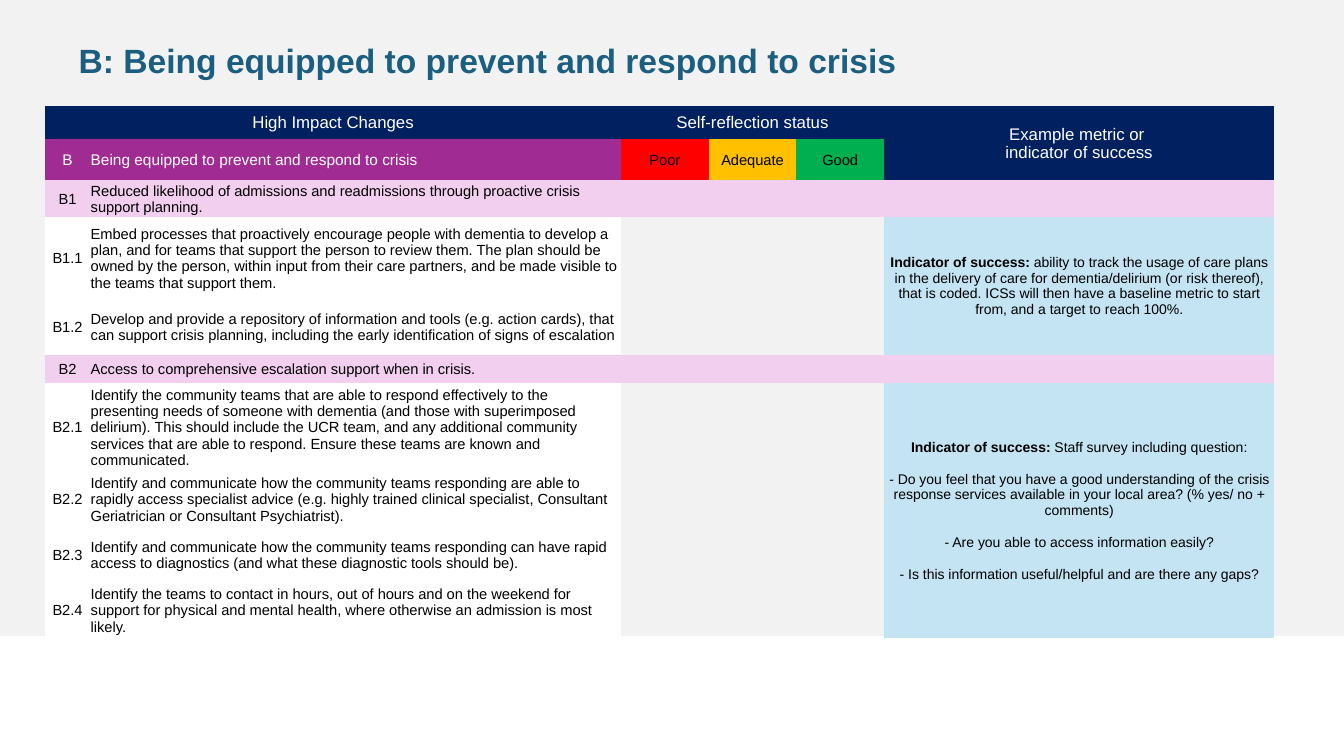
import lxml.etree
import pptx
import pptx.dml.color
import pptx.enum.shapes
import pptx.enum.text
import pptx.oxml.ns
import pptx.util

Inches = pptx.util.Inches
RGBColor = pptx.dml.color.RGBColor
ALIGN = pptx.enum.text.PP_ALIGN
ANCHOR = pptx.enum.text.MSO_ANCHOR

BLACK = RGBColor(0, 0, 0)
WHITE = RGBColor(0xFF, 0xFF, 0xFF)
BAND_GREY = RGBColor(0xF2, 0xF2, 0xF2)
TITLE_BLUE = RGBColor(0x1B, 0x5E, 0x7F)
NAVY = RGBColor(0x00, 0x20, 0x60)
PURPLE = RGBColor(0xA0, 0x2B, 0x93)
PINK = RGBColor(0xF2, 0xCE, 0xEF)
PALE_BLUE = RGBColor(0xC4, 0xE3, 0xF3)
RED = RGBColor(0xFF, 0x00, 0x00)
AMBER = RGBColor(0xFF, 0xC0, 0x00)
GREEN = RGBColor(0x00, 0xB0, 0x50)

NO_GRID_STYLE = "{2D5ABB26-0587-4C30-8999-92F81FD0307C}"
COLUMN_WIDTHS = [0.44, 5.27, 0.87, 0.87, 0.87, 3.87]
ROW_HEIGHTS = [0.33, 0.41, 0.36, 0.82, 0.55, 0.28, 0.88, 0.55, 0.55, 0.55]
METRIC_COLUMN = 5

STATUSES = [("Poor", RED), ("Adequate", AMBER), ("Good", GREEN)]

CHANGES = [
    ("B1", "Reduced likelihood of admissions and readmissions through proactive crisis support planning."),
    ("B1.1", "Embed processes that proactively encourage people with dementia to develop a plan, and for "
             "teams that support the person to review them. The plan should be owned by the person, within "
             "input from their care partners, and be made visible to the teams that support them."),
    ("B1.2", "Develop and provide a repository of information and tools (e.g. action cards), that can support "
             "crisis planning, including the early identification of signs of escalation"),
    ("B2", "Access to comprehensive escalation support when in crisis."),
    ("B2.1", "Identify the community teams that are able to respond effectively to the presenting needs of "
             "someone with dementia (and those with superimposed delirium). This should include the UCR team, "
             "and any additional community services that are able to respond. Ensure these teams are known "
             "and communicated."),
    ("B2.2", "Identify and communicate how the community teams responding are able to rapidly access "
             "specialist advice (e.g. highly trained clinical specialist, Consultant Geriatrician or "
             "Consultant Psychiatrist)."),
    ("B2.3", "Identify and communicate how the community teams responding can have rapid access to "
             "diagnostics (and what these diagnostic tools should be)."),
    ("B2.4", "Identify the teams to contact in hours, out of hours and on the weekend for support for physical "
             "and mental health, where otherwise an admission is most likely."),
]

INDICATORS = [
    (3, 4, "ability to track the usage of care plans in the delivery of care for dementia/delirium (or risk "
           "thereof), that is coded. ICSs will then have a baseline metric to start from, and a target to "
           "reach 100%."),
    (6, 9, "Staff survey including question:\n"
           "- Do you feel that you have a good understanding of the crisis response services available in "
           "your local area? (% yes/ no + comments)\n"
           "- Are you able to access information easily?\n"
           "- Is this information useful/helpful and are there any gaps?"),
]


def write_text(frame, text, size=10.5, color=BLACK, bold=False, align=ALIGN.LEFT, lead="", gap=0, line=None):
    for index, wording in enumerate(text.split("\n")):
        paragraph = frame.add_paragraph() if index else frame.paragraphs[0]
        paragraph.alignment = align
        paragraph.space_before = pptx.util.Pt(gap if index else 0)
        if line:
            paragraph.line_spacing = pptx.util.Pt(line)
        pieces = [(wording, bold)]
        if lead and index == 0:
            pieces.insert(0, (lead, True))
        for piece, heavy in pieces:
            run = paragraph.add_run()
            run.text = piece
            run.font.name = "Arial"
            run.font.size = pptx.util.Pt(size)
            run.font.bold = heavy
            run.font.color.rgb = color


def add_band(slide):
    band = slide.shapes.add_shape(
        pptx.enum.shapes.MSO_SHAPE.RECTANGLE, 0, 0, Inches(13.33), Inches(6.31))
    band.shadow.inherit = False
    band.fill.solid()
    band.fill.fore_color.rgb = BAND_GREY
    band.line.fill.background()
    slide.shapes._spTree.insert(2, band._element)


def place_title(slide):
    title = slide.shapes.title
    title.left, title.top = Inches(0.68), Inches(0.3)
    title.width, title.height = Inches(11.97), Inches(0.51)
    frame = title.text_frame
    frame.word_wrap = True
    frame.auto_size = pptx.enum.text.MSO_AUTO_SIZE.NONE
    frame.vertical_anchor = ANCHOR.TOP
    write_text(frame, "B: Being equipped to prevent and respond to crisis",
               size=24, color=TITLE_BLUE, bold=True, line=32)


def add_grid(slide):
    frame = slide.shapes.add_table(
        len(ROW_HEIGHTS), len(COLUMN_WIDTHS), Inches(0.45), Inches(1.05),
        Inches(sum(COLUMN_WIDTHS)), Inches(sum(ROW_HEIGHTS)))
    grid = frame.table
    grid.first_row = grid.horz_banding = False
    grid._tbl.tblPr.find(pptx.oxml.ns.qn("a:tableStyleId")).text = NO_GRID_STYLE
    for column, width in zip(grid.columns, COLUMN_WIDTHS):
        column.width = Inches(width)
    for row, height in zip(grid.rows, ROW_HEIGHTS):
        row.height = Inches(height)
    for cell in grid.iter_cells():
        cell.margin_left = cell.margin_right = cell.margin_top = Inches(0.01)
        cell.margin_bottom = 0
        cell.vertical_anchor = ANCHOR.MIDDLE
        cell.fill.background()
    return grid


def fill_cell(cell, background, text="", **text_format):
    cell.fill.solid()
    cell.fill.fore_color.rgb = background
    if text:
        write_text(cell.text_frame, text, **text_format)


def shrink_empty_cells(grid):
    for cell in grid.iter_cells():
        paragraph = cell.text_frame.paragraphs[0]
        if not paragraph.runs:
            lxml.etree.SubElement(paragraph._p, pptx.oxml.ns.qn("a:endParaRPr"), sz="1050")


def fill_headings(grid):
    headings = [
        ((0, 0), (0, 1), "High Impact Changes"),
        ((0, 2), (0, 4), "Self-reflection status"),
        ((0, METRIC_COLUMN), (1, METRIC_COLUMN), "Example metric or \nindicator of success"),
    ]
    for first, last, heading in headings:
        grid.cell(*first).merge(grid.cell(*last))
        fill_cell(grid.cell(*first), NAVY, heading, size=12, color=WHITE, align=ALIGN.CENTER)
    fill_cell(grid.cell(1, 0), PURPLE, "B", size=11, color=WHITE, align=ALIGN.CENTER)
    fill_cell(grid.cell(1, 1), PURPLE, "Being equipped to prevent and respond to crisis", size=11, color=WHITE)
    for column, (status, background) in enumerate(STATUSES, start=2):
        fill_cell(grid.cell(1, column), background, status, align=ALIGN.CENTER)


def fill_changes(grid):
    for row, (code, change) in enumerate(CHANGES, start=2):
        is_group = "." not in code
        background = PINK if is_group else WHITE
        fill_cell(grid.cell(row, 0), background, code, align=ALIGN.CENTER)
        fill_cell(grid.cell(row, 1), background, change)
        if is_group:
            for column in range(2, len(COLUMN_WIDTHS)):
                fill_cell(grid.cell(row, column), PINK)


def fill_indicators(grid):
    for first, last, indicator in INDICATORS:
        cell = grid.cell(first, METRIC_COLUMN)
        cell.merge(grid.cell(last, METRIC_COLUMN))
        fill_cell(cell, PALE_BLUE, indicator, size=10, align=ALIGN.CENTER,
                  lead="Indicator of success: ", gap=11.5)


def main():
    deck = pptx.Presentation()
    deck.slide_width, deck.slide_height = Inches(13.33), Inches(7.5)
    slide = deck.slides.add_slide(deck.slide_layouts[5])
    add_band(slide)
    place_title(slide)
    grid = add_grid(slide)
    fill_headings(grid)
    fill_changes(grid)
    fill_indicators(grid)
    shrink_empty_cells(grid)
    deck.save("out.pptx")


if __name__ == "__main__":
    main()
